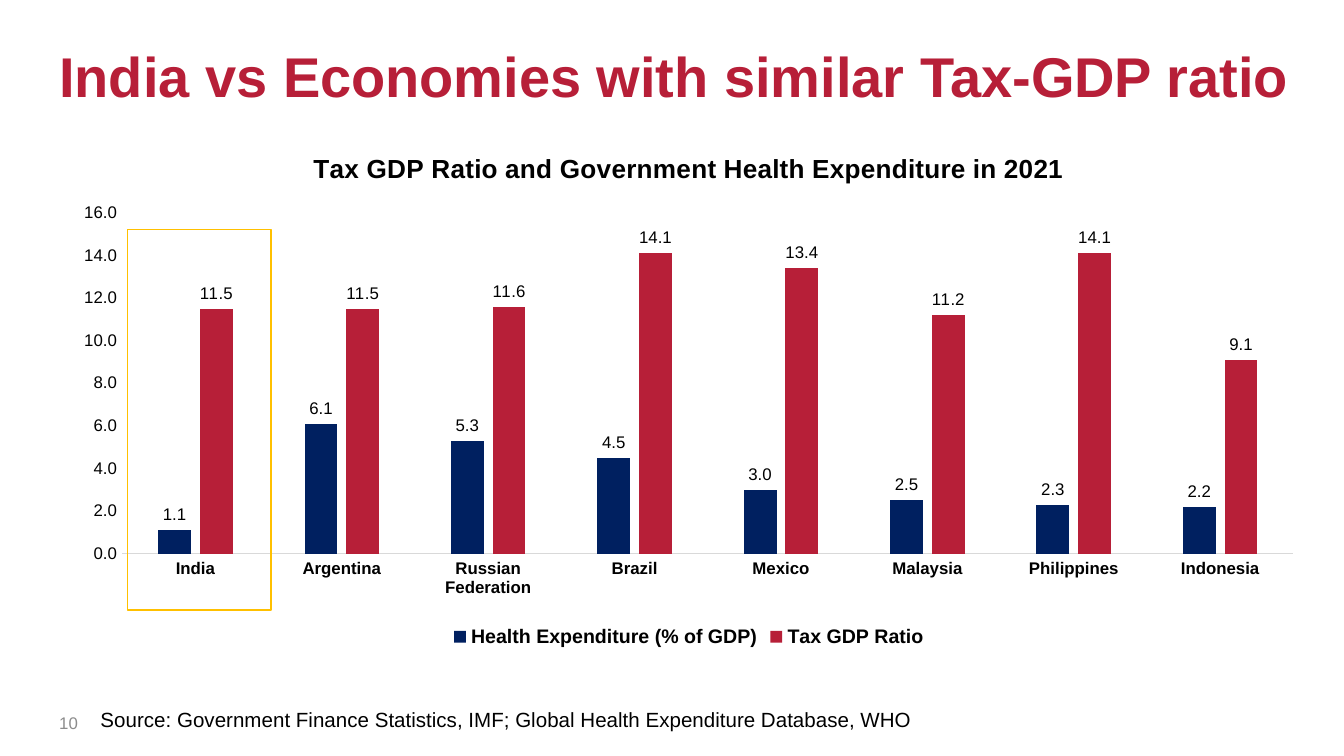
from pptx import Presentation, util as u
from pptx.chart.data import CategoryChartData
from pptx.dml.color import RGBColor
from pptx.enum import chart as ch, shapes, text
from pptx.oxml import parse_xml
from pptx.oxml.ns import nsdecls, qn

RED, NAVY, GOLD, BLACK = "B71F38", "002060", "FFC000", "000000"
NATIONS = ["India", "Argentina", "Russian Federation", "Brazil",
           "Mexico", "Malaysia", "Philippines", "Indonesia"]
SERIES = [
    ("Health Expenditure (% of GDP)", NAVY, [1.1, 6.1, 5.3, 4.5, 3, 2.5, 2.3, 2.2]),
    ("Tax GDP Ratio", RED, [11.5, 11.5, 11.6, 14.1, 13.4, 11.2, 14.1, 9.1]),
]


def tint(code):
    return RGBColor.from_string(code)


def put(thing, **values):
    for name, value in values.items():
        setattr(thing, name, value)


class Page:
    font = "Arial"

    def __init__(self, deck):
        self.slide = deck.slides.add_slide(deck.slide_layouts[5])

    def style(self, font, size, color=BLACK, bold=False):
        put(font, name=self.font, size=u.Pt(size), bold=bold)
        font.color.rgb = tint(color)

    def fill(self, frame, words, size, color=BLACK, bold=False, **values):
        put(frame, word_wrap=True, auto_size=text.MSO_AUTO_SIZE.NONE, **values)
        para = frame.paragraphs[0]
        para.text = words
        para.alignment = text.PP_ALIGN.LEFT
        self.style(para.runs[0].font, size, color, bold)
        return para

    def title(self, words, box):
        shape = self.slide.shapes.title
        put(shape, **dict(zip(("left", "top", "width", "height"), map(u.Cm, box))))
        para = self.fill(shape.text_frame, words, 30, RED, True,
                         margin_left=0, margin_right=0,
                         vertical_anchor=text.MSO_ANCHOR.MIDDLE)
        para.line_spacing = 0.9

    def label(self, words, box, size, color=BLACK, **values):
        shape = self.slide.shapes.add_textbox(*map(u.Cm, box))
        self.fill(shape.text_frame, words, size, color, **values)

    def frame(self, box, color):
        shape = self.slide.shapes.add_shape(shapes.MSO_SHAPE.RECTANGLE, *map(u.Cm, box))
        shape.shadow.inherit = False
        shape.fill.background()
        shape.line.color.rgb = tint(color)
        shape.line.width = u.Pt(1)

    def columns(self, title, names, series, box):
        data = CategoryChartData(number_format="0.0")
        data.categories = names
        for name, _, values in series:
            data.add_series(name, values)
        chart = self.slide.shapes.add_chart(
            ch.XL_CHART_TYPE.COLUMN_CLUSTERED, *map(u.Cm, box), data).chart
        self.style(chart.font, 10)
        chart.has_title = True
        head = chart.chart_title.text_frame
        head.text = title
        self.style(head.paragraphs[0].runs[0].font, 14, bold=True)
        chart.has_legend = True
        put(chart.legend, position=ch.XL_LEGEND_POSITION.BOTTOM, include_in_layout=False)
        self.style(chart.legend.font, 10.5, bold=True)

        plot = chart.plots[0]
        put(plot, gap_width=219, overlap=-27, vary_by_categories=False)
        for (_, color, _), bars in zip(series, plot.series):
            bars.format.fill.solid()
            bars.format.fill.fore_color.rgb = tint(color)
            marks = bars.data_labels
            put(marks, show_value=True, number_format="0.0",
                number_format_is_linked=False,
                position=ch.XL_LABEL_POSITION.OUTSIDE_END)
            self.style(marks.font, 9)
        self.axes(chart)
        self.place(chart, x=0.05, y=0.16, w=0.93, h=0.65)

    def axes(self, chart):
        base, scale = chart.category_axis, chart.value_axis
        for axis in (base, scale):
            put(axis, has_major_gridlines=False,
                major_tick_mark=ch.XL_TICK_MARK.NONE,
                minor_tick_mark=ch.XL_TICK_MARK.NONE)
            self.style(axis.tick_labels.font, 9, bold=axis is base)
        base.format.line.color.rgb = tint("D9D9D9")
        base.format.line.width = u.Pt(0.75)
        put(scale, minimum_scale=0, maximum_scale=16, major_unit=2)
        put(scale.tick_labels, number_format="0.0", number_format_is_linked=False)
        scale.format.line.fill.background()

    def place(self, chart, **parts):
        """Fix the inner plot area as shares of the chart."""
        area = chart.element.find(".//" + qn("c:plotArea"))
        for old in area.findall(qn("c:layout")):
            area.remove(old)
        modes = '<c:xMode val="edge"/><c:yMode val="edge"/>'
        spots = "".join(f'<c:{key} val="{part}"/>' for key, part in parts.items())
        area.insert(0, parse_xml(
            f'<c:layout {nsdecls("c")}><c:manualLayout><c:layoutTarget val="inner"/>'
            f"{modes}{spots}</c:manualLayout></c:layout>"))


def main():
    deck = Presentation()
    put(deck, slide_width=u.Cm(25.4), slide_height=u.Cm(14.29))
    page = Page(deck)
    page.title("India vs Economies with similar Tax-GDP ratio", (1.12, 0.25, 24, 2.49))
    page.label("10", (1.12, 13.26, 1.09, 0.79), 9, "8C8C8C", margin_left=0,
               margin_right=0, vertical_anchor=text.MSO_ANCHOR.MIDDLE)
    page.columns("Tax GDP Ratio and Government Health Expenditure in 2021",
                 NATIONS, SERIES, (1.12, 2.44, 23.8, 9.91))
    page.label("Source: Government Finance Statistics, IMF; "
               "Global Health Expenditure Database, WHO", (1.65, 13.23, 16.61, 0.74), 11)
    page.frame((2.41, 4.34, 2.72, 7.19), GOLD)
    deck.save("out.pptx")


if __name__ == "__main__":
    main()
